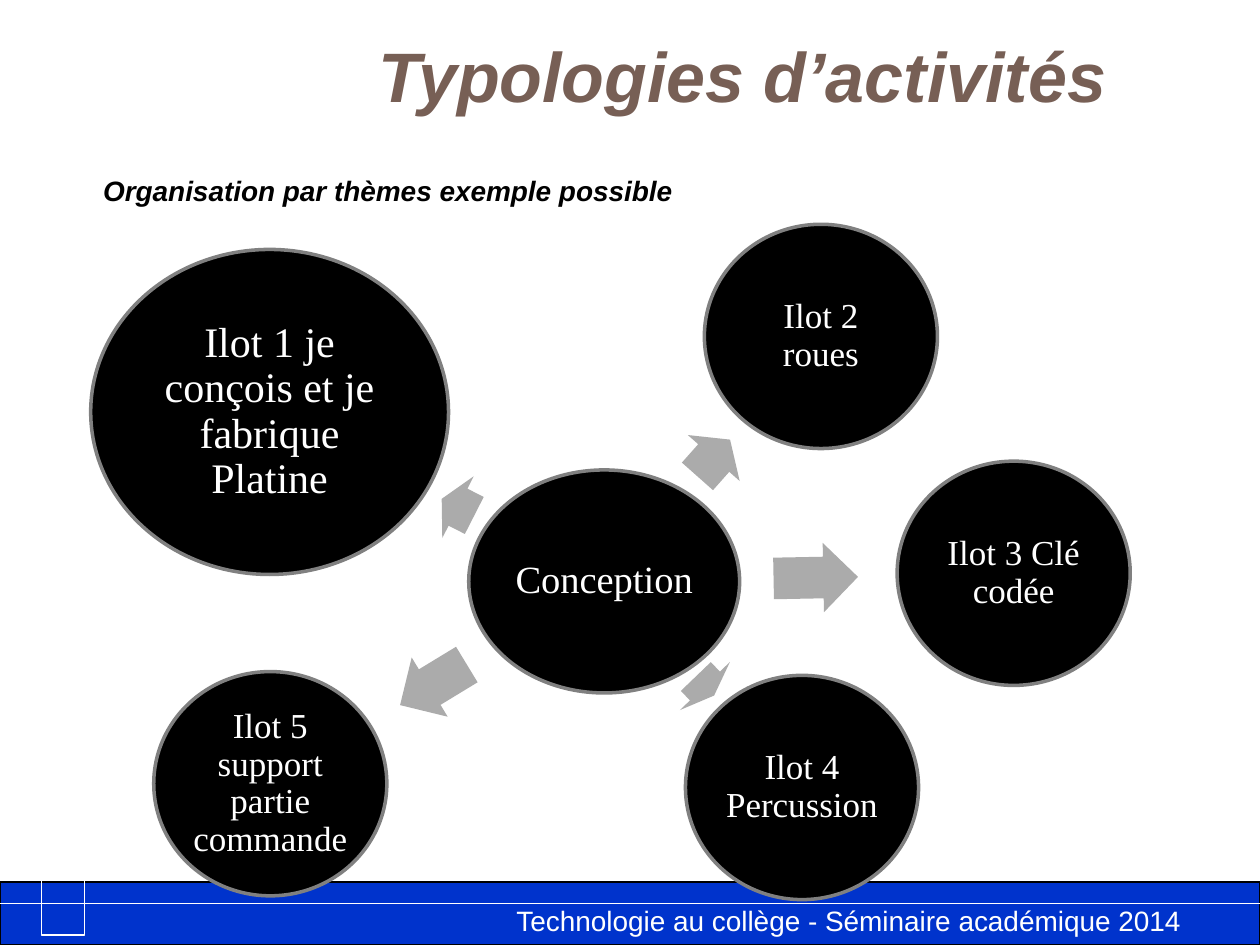
from dataclasses import dataclass

from lxml import etree
from pptx import Presentation
from pptx.enum import shapes, text
from pptx.dml.color import RGBColor
from pptx.oxml.ns import qn
from pptx.util import Inches, Pt

COLORS = {
    "white": "FFFFFF", "black": "000000", "footer": "0033CC",
    "outline": "808080", "arrow": "ABABAB", "title": "775F55",
}
SERIF, SANS = "Times New Roman", "Arial"


@dataclass
class Bubble:
    label: str
    left: float
    top: float
    width: float = 1.85
    height: float = 1.78
    size: int = 20


@dataclass
class Arrow:
    left: float
    top: float
    width: float
    angle: float
    height: float = 0.55


def rgb(name: str) -> RGBColor:
    return RGBColor.from_string(COLORS[name])


def write(tf, content: str, *, size: int, color: str, font: str = SANS,
          bold: bool = False, italic: bool = False, align=text.PP_ALIGN.LEFT,
          spacing: float = 1.0, wrap: bool = True) -> None:
    tf.auto_size = text.MSO_AUTO_SIZE.NONE
    tf.word_wrap = wrap
    p = tf.paragraphs[0]
    p.alignment, p.line_spacing = align, spacing
    r = p.add_run()
    r.text = content
    f = r.font
    f.name, f.size, f.bold, f.italic = font, Pt(size), bold, italic
    f.color.rgb = rgb(color)


def add_box(slide, left: float, top: float, width: float, height: float):
    box = slide.shapes.add_textbox(Inches(left), Inches(top), Inches(width), Inches(height))
    return box.text_frame


def add_filled(slide, kind, left: float, top: float, width: float, height: float,
               fill: str, line: str | None = None, weight: float = 0.75):
    sp = slide.shapes.add_shape(kind, Inches(left), Inches(top), Inches(width), Inches(height))
    sp.shadow.inherit = False
    sp.fill.solid()
    sp.fill.fore_color.rgb = rgb(fill)
    if line:
        sp.line.color.rgb = rgb(line)
        sp.line.width = Pt(weight)
    else:
        sp.line.fill.background()
    return sp


def add_bubble(slide, b: Bubble) -> None:
    sp = add_filled(slide, shapes.MSO_SHAPE.OVAL, b.left, b.top, b.width, b.height,
                    "black", "outline", 2)
    tf = sp.text_frame
    tf.margin_left = tf.margin_right = tf.margin_top = tf.margin_bottom = Inches(0.03)
    tf.vertical_anchor = text.MSO_ANCHOR.MIDDLE
    write(tf, b.label, size=b.size, color="white", font=SERIF,
          align=text.PP_ALIGN.CENTER, spacing=0.9)


def add_arrow(slide, a: Arrow) -> None:
    sp = add_filled(slide, shapes.MSO_SHAPE.RIGHT_ARROW, a.left, a.top, a.width, a.height, "arrow")
    sp.adjustments[0], sp.adjustments[1] = 0.6, 0.5
    sp.rotation = a.angle


HUB = Bubble("Conception", 3.72, 3.73, 2.15, 1.77, 22)
ISLANDS = [
    (Arrow(3.49, 3.75, 0.29, 207),
     Bubble("Ilot 1 je conçois et je fabrique Platine", 0.72, 1.98, 2.84, 2.58, 24)),
    (Arrow(6.14, 4.31, 0.67, 358.9), Bubble("Ilot 3 Clé codée", 7.12, 3.66)),
    (Arrow(5.49, 5.17, 0.21, 46.1), Bubble("Ilot 4 Percussion", 5.44, 5.36)),
    (Arrow(3.13, 5.16, 0.62, 148.7), Bubble("Ilot 5 support partie commande", 1.22, 5.33)),
    (Arrow(5.47, 3.36, 0.39, 311.6), Bubble("Ilot 2 roues", 5.59, 1.78)),
]


def add_footer(slide) -> None:
    add_filled(slide, shapes.MSO_SHAPE.RECTANGLE, 0, 7, 10, 0.5, "footer", "black")
    rule = slide.shapes.add_connector(shapes.MSO_CONNECTOR.STRAIGHT, 0, Inches(7.17),
                                      Inches(10), Inches(7.17))
    rule.line.color.rgb = rgb("white")
    rule.line.width = Pt(0.75)
    etree.SubElement(rule._element.spPr, qn("a:effectLst"))
    write(add_box(slide, 4, 7.12, 6, 0.37),
          "Technologie au collège - Séminaire académique 2014", size=16, color="white")

    # White hook that crosses the band
    points = [(0.67, 0.08), (0.67, 7.42), (0.33, 7.42), (0.33, 6.65)]
    hook = [(Inches(x), Inches(y)) for x, y in points]
    builder = slide.shapes.build_freeform(*hook[0])
    builder.add_line_segments(hook[1:], close=False)
    sp = builder.convert_to_shape()
    sp.shadow.inherit = False
    sp.fill.background()
    sp.line.color.rgb = rgb("white")
    sp.line.width = Pt(0.75)


def main() -> None:
    prs = Presentation()
    prs.slide_width, prs.slide_height = Inches(10), Inches(7.5)
    slide = prs.slides.add_slide(prs.slide_layouts[5])

    # Title and subtitle
    title = slide.shapes.title
    title.left, title.top = Inches(2.01), Inches(0.21)
    title.width, title.height = Inches(7.76), Inches(0.77)
    title.text_frame.vertical_anchor = text.MSO_ANCHOR.MIDDLE
    write(title.text_frame, "Typologies d’activités", size=40, color="title",
          bold=True, italic=True, align=text.PP_ALIGN.CENTER)

    add_footer(slide)
    write(add_box(slide, 0.72, 1.33, 4.78, 0.37), "Organisation par thèmes exemple possible",
          size=16, color="black", bold=True, italic=True, wrap=False)

    # Hub and its islands
    add_bubble(slide, HUB)
    for arrow, island in ISLANDS:
        add_arrow(slide, arrow)
        add_bubble(slide, island)

    prs.save("out.pptx")


if __name__ == "__main__":
    main()
